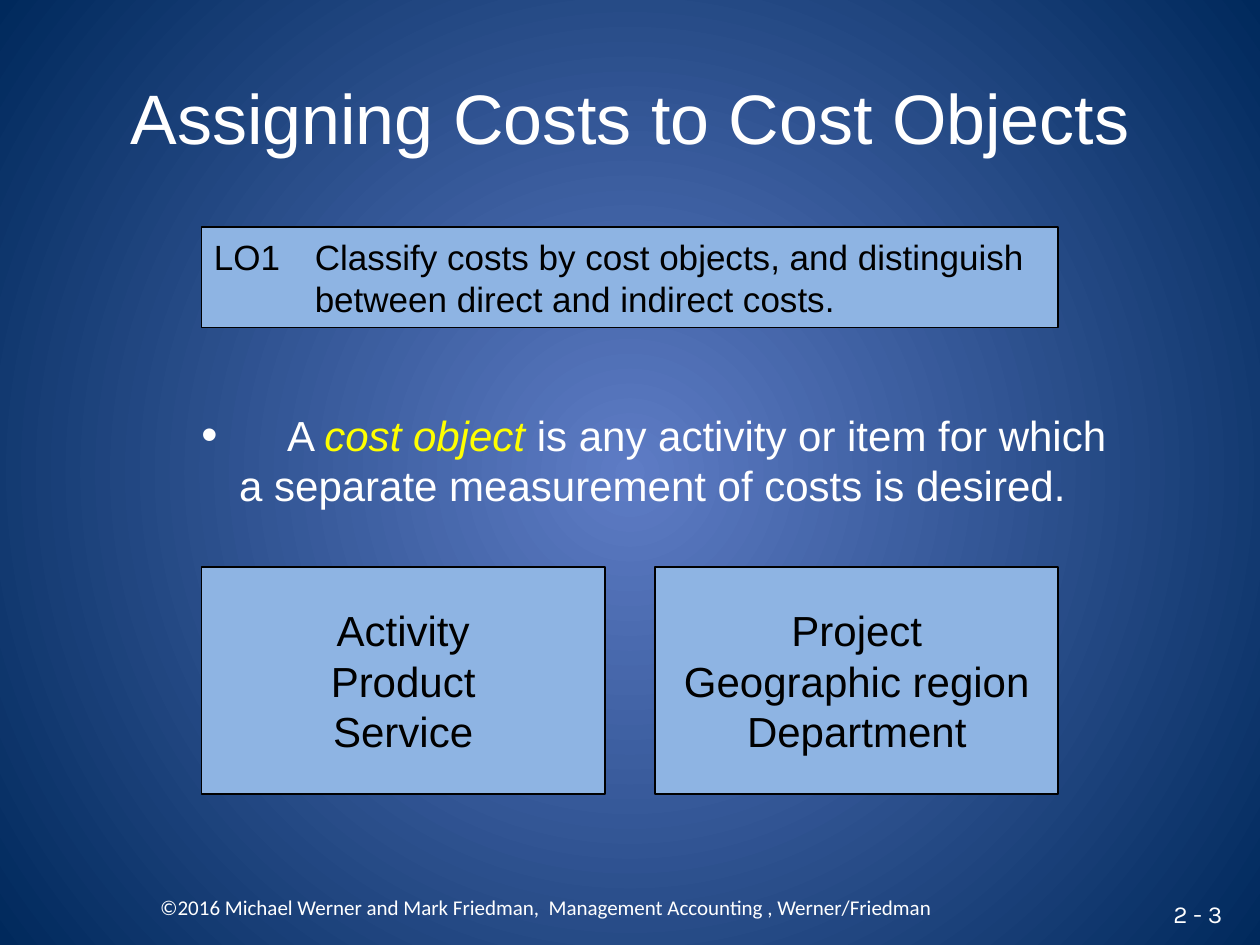
from dataclasses import dataclass

from lxml.etree import SubElement
from pptx import Presentation
from pptx.dml.color import RGBColor
from pptx.enum.shapes import MSO_SHAPE as SHAPE
from pptx.enum.text import MSO_ANCHOR as ANCHOR, PP_ALIGN as ALIGN
from pptx.oxml.ns import qn
from pptx.util import Inches, Pt


@dataclass(frozen=True)
class Theme:
    center: str = "5E7CC5"
    edge: str = "00295C"
    panel: str = "8EB4E3"
    dark: str = "000000"
    light: str = "FFFFFF"
    accent: str = "FFFF00"
    font: str = "Arial"
    footer_font: str = "Calibri"
    number_font: str = "Karla"
    title: int = 40
    body: int = 24
    objective: int = 20
    number: int = 14
    footer: int = 12


THEME = Theme()


def rgb(value):
    return RGBColor.from_string(value)


def add_run(p, text, size=THEME.body, color=THEME.light, font=THEME.font, italic=False):
    r = p.add_run()
    r.text = text
    r.font.size, r.font.name, r.font.italic = Pt(size), font, italic
    r.font.color.rgb = rgb(color)


def set_hanging(p, margin, tab=None, bullet=None):
    """Indent a paragraph with a hanging first line, in inches."""
    pPr = p._p.get_or_add_pPr()
    pPr.set("marL", str(Inches(margin)))
    pPr.set("indent", str(-Inches(margin)))
    if bullet:
        clr = SubElement(pPr, qn("a:buClr"))
        SubElement(clr, qn("a:srgbClr"), val=THEME.light)
        SubElement(pPr, qn("a:buSzPct"), val="110000")
        SubElement(pPr, qn("a:buFont"), typeface=THEME.font)
        SubElement(pPr, qn("a:buChar"), char=bullet)
    if tab:
        tabs = SubElement(pPr, qn("a:tabLst"))
        SubElement(tabs, qn("a:tab"), pos=str(Inches(tab)), algn="l")


class SlideBuilder:
    def __init__(self, slide, theme):
        self.s, self.theme = slide, theme

    def background(self):
        """Fill the slide with a gradient that spreads from its middle."""
        fill = self.s.background.fill
        fill.gradient()
        colors = (self.theme.center, self.theme.edge)
        for stop, color, pos in zip(fill.gradient_stops, colors, (0, 1)):
            stop.color.rgb, stop.position = rgb(color), pos
        grad = self.s._element.find(".//" + qn("a:gradFill"))
        grad.remove(grad.find(qn("a:lin")))
        circle = SubElement(grad, qn("a:path"), {"path": "circle"})
        SubElement(circle, qn("a:fillToRect"), l="50000", t="50000", r="50000", b="50000")

    def add_lines(self, sp, lines, align, anchor, **fmt):
        """Put one paragraph per line in a shape and return the first."""
        tf = sp.text_frame
        tf.word_wrap, tf.vertical_anchor = True, anchor
        for i, line in enumerate(lines):
            p = tf.add_paragraph() if i else tf.paragraphs[0]
            p.alignment = align
            add_run(p, line, **fmt)
        return tf.paragraphs[0]

    def text(self, box, *lines, align=ALIGN.CENTER, anchor=ANCHOR.MIDDLE, **fmt):
        sp = self.s.shapes.add_textbox(*map(Inches, box))
        return self.add_lines(sp, lines, align, anchor, **fmt)

    def panel(self, box, *lines, align=ALIGN.CENTER, **fmt):
        sp = self.s.shapes.add_shape(SHAPE.RECTANGLE, *map(Inches, box))
        sp.shadow.inherit = False
        sp.fill.solid()
        sp.fill.fore_color.rgb = rgb(self.theme.panel)
        sp.line.color.rgb, sp.line.width = rgb(self.theme.dark), Pt(1)
        return self.add_lines(sp, lines, align, ANCHOR.MIDDLE, color=self.theme.dark, **fmt)


def main():
    prs = Presentation()
    prs.slide_width, prs.slide_height = Inches(10), Inches(7.5)
    b = SlideBuilder(prs.slides.add_slide(prs.slide_layouts[6]), THEME)
    b.background()

    b.text((0.5, 0.3, 9, 1.25), "Assigning Costs to Cost Objects", size=THEME.title)

    left, width, gap = 1.6, 6.8, 0.4
    objective = b.panel(
        (left, 1.8, width, 0.8),
        "LO1\tClassify costs by cost objects, and distinguish between direct and indirect costs.",
        align=ALIGN.LEFT, size=THEME.objective)
    set_hanging(objective, 0.8)

    definition = b.text((1.5, 3.2, 7.4, 0.9), "\tA ", align=ALIGN.LEFT, anchor=ANCHOR.TOP)
    add_run(definition, "cost object ", color=THEME.accent, italic=True)
    add_run(definition, "is any activity or item for which a separate measurement of costs is desired.")
    set_hanging(definition, 0.3, tab=0.68, bullet="•")

    examples = [("Activity", "Product", "Service"),
                ("Project", "Geographic region", "Department")]
    panel_width = (width - gap) / 2
    for i, lines in enumerate(examples):
        b.panel((left + i * (panel_width + gap), 4.5, panel_width, 1.8), *lines)

    b.text((0.42, 7, 7.83, 0.4),
           "©2016 Michael Werner and Mark Friedman,  Management Accounting , Werner/Friedman",
           size=THEME.footer, font=THEME.footer_font)
    b.text((9, 7.1, 0.8, 0.3), "2 - 3", align=ALIGN.RIGHT,
           size=THEME.number, font=THEME.number_font)

    prs.save("out.pptx")


if __name__ == "__main__":
    main()
